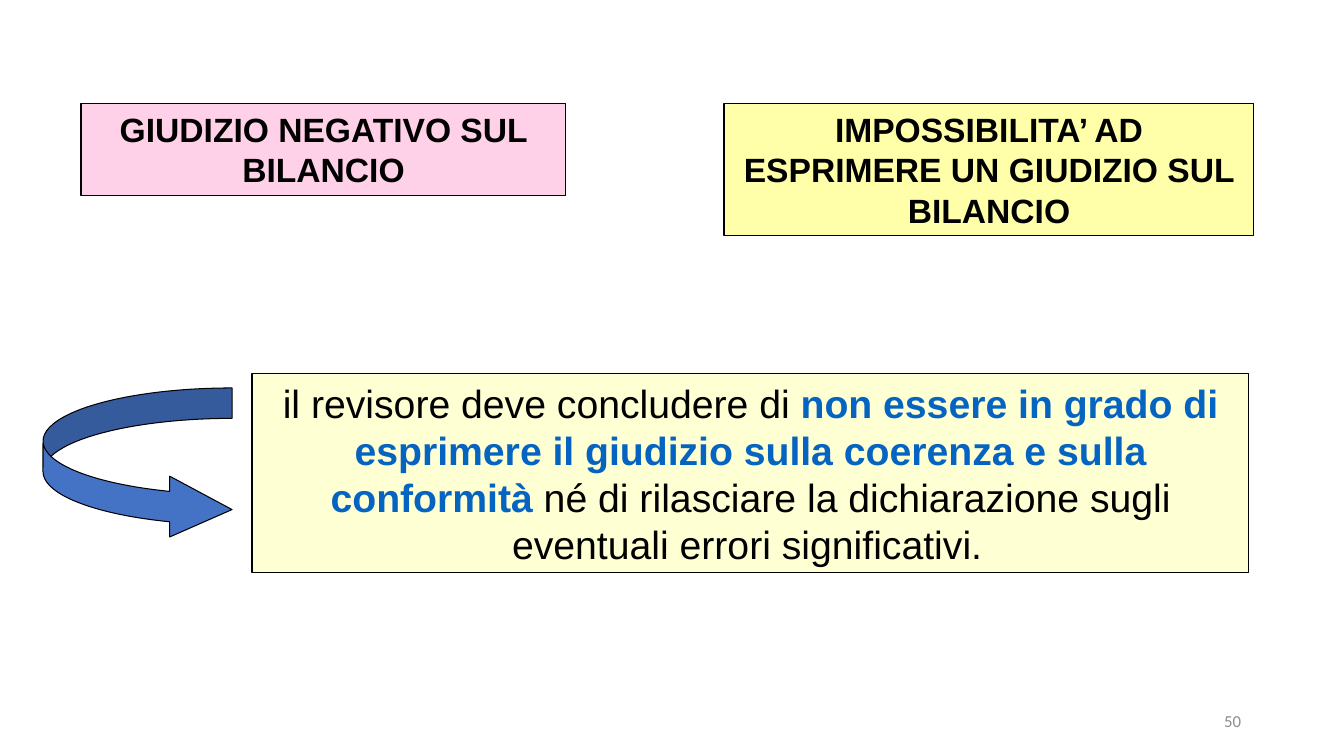
from dataclasses import dataclass

from lxml.etree import SubElement
from pptx import Presentation
from pptx.dml.color import RGBColor
from pptx.enum.shapes import MSO_SHAPE
from pptx.enum.text import MSO_ANCHOR, PP_ALIGN
from pptx.oxml.ns import qn
from pptx.util import Pt

EMU_PER_PX = 12192000 / 1344


@dataclass(frozen=True)
class Theme:
    """Colours, fonts and type sizes of the slide."""
    ink: str = "000000"
    emphasis: str = "0563C1"
    muted: str = "8C8C8C"
    pink: str = "FF99CC"
    yellow: str = "FFFF99"
    arrow: str = "4472C4"
    body_font: str = "Arial"
    number_font: str = "Calibri"
    heading_size: int = 24
    conclusion_size: int = 28
    trailing_size: int = 18
    number_size: int = 12
    outline: float = 0.75


THEME = Theme()


def px(length):
    """Turn pixels into EMU."""
    return round(length * EMU_PER_PX)


def write_run(paragraph, text, size, color, bold=False, font=THEME.body_font):
    """Append one formatted run to a paragraph."""
    run = paragraph.add_run()
    run.text = text
    run.font.name = font
    run.font.size = Pt(size)
    run.font.bold = bold
    run.font.color.rgb = RGBColor.from_string(color)


def draw_outlined(slide, preset, box, color, opacity=100):
    """Draw a thinly outlined preset shape with a fill of the given opacity."""
    shape = slide.shapes.add_shape(preset, *map(px, box))
    shape.shadow.inherit = False
    shape.fill.solid()
    shape.fill.fore_color.rgb = RGBColor.from_string(color)
    if opacity < 100:
        tint = shape.fill._xPr.find(f".//{qn('a:srgbClr')}")
        SubElement(tint, qn("a:alpha"), val=str(opacity * 1000))
    shape.line.color.rgb = RGBColor.from_string(THEME.ink)
    shape.line.width = Pt(THEME.outline)
    return shape


def draw_statement(slide, box, color, opacity, phrases):
    """Draw a tinted panel holding one centred paragraph of phrases."""
    panel = draw_outlined(slide, MSO_SHAPE.RECTANGLE, box, color, opacity)
    frame = panel.text_frame
    frame.word_wrap = True
    frame.vertical_anchor = MSO_ANCHOR.TOP
    statement = frame.paragraphs[0]
    statement.alignment = PP_ALIGN.CENTER
    for phrase in phrases:
        write_run(statement, *phrase)


def draw_headings(slide, left, top):
    """Draw the two opinion headings side by side."""
    headings = (
        (0, 485, 92, THEME.pink, 45, "GIUDIZIO NEGATIVO SUL BILANCIO"),
        (643, 530, 132, THEME.yellow, 83,
         "IMPOSSIBILITA’ AD ESPRIMERE UN GIUDIZIO SUL BILANCIO"),
    )
    for offset, width, height, color, opacity, title in headings:
        draw_statement(slide, (left + offset, top, width, height), color, opacity,
                       [(title, THEME.heading_size, THEME.ink, True)])


def draw_conclusion(slide, left, top):
    """Draw the conclusion panel and the curved arrow leading to it."""
    size = THEME.conclusion_size
    draw_statement(slide, (left + 209, top, 997, 199), THEME.yellow, 42, [
        ("il revisore deve concludere di ", size, THEME.ink),
        ("non essere in grado di esprimere il giudizio sulla coerenza e sulla conformità",
         size, THEME.emphasis, True),
        (" né di rilasciare la dichiarazione sugli eventuali errori significativi.",
         size, THEME.ink),
        (" ", THEME.trailing_size, THEME.ink),
    ])
    arrow = draw_outlined(slide, MSO_SHAPE.CURVED_RIGHT_ARROW,
                          (left, top + 14, 189, 152), THEME.arrow)
    for index, proportion in enumerate((0.2, 0.4, 0.41)):
        arrow.adjustments[index] = proportion


def draw_page_number(slide, box, number):
    """Write the page number at the right of its box."""
    frame = slide.shapes.add_textbox(*map(px, box)).text_frame
    frame.word_wrap = True
    frame.vertical_anchor = MSO_ANCHOR.MIDDLE
    line = frame.paragraphs[0]
    line.alignment = PP_ALIGN.RIGHT
    write_run(line, number, THEME.number_size, THEME.muted, font=THEME.number_font)


def main():
    """Build the slide and save it."""
    deck = Presentation()
    deck.slide_width, deck.slide_height = px(1344), px(756)
    slide = deck.slides.add_slide(deck.slide_layouts[6])
    draw_page_number(slide, (949, 701, 302, 40), "50")
    draw_headings(slide, 81, 104)
    draw_conclusion(slide, 43, 374)
    deck.save("out.pptx")


if __name__ == "__main__":
    main()
